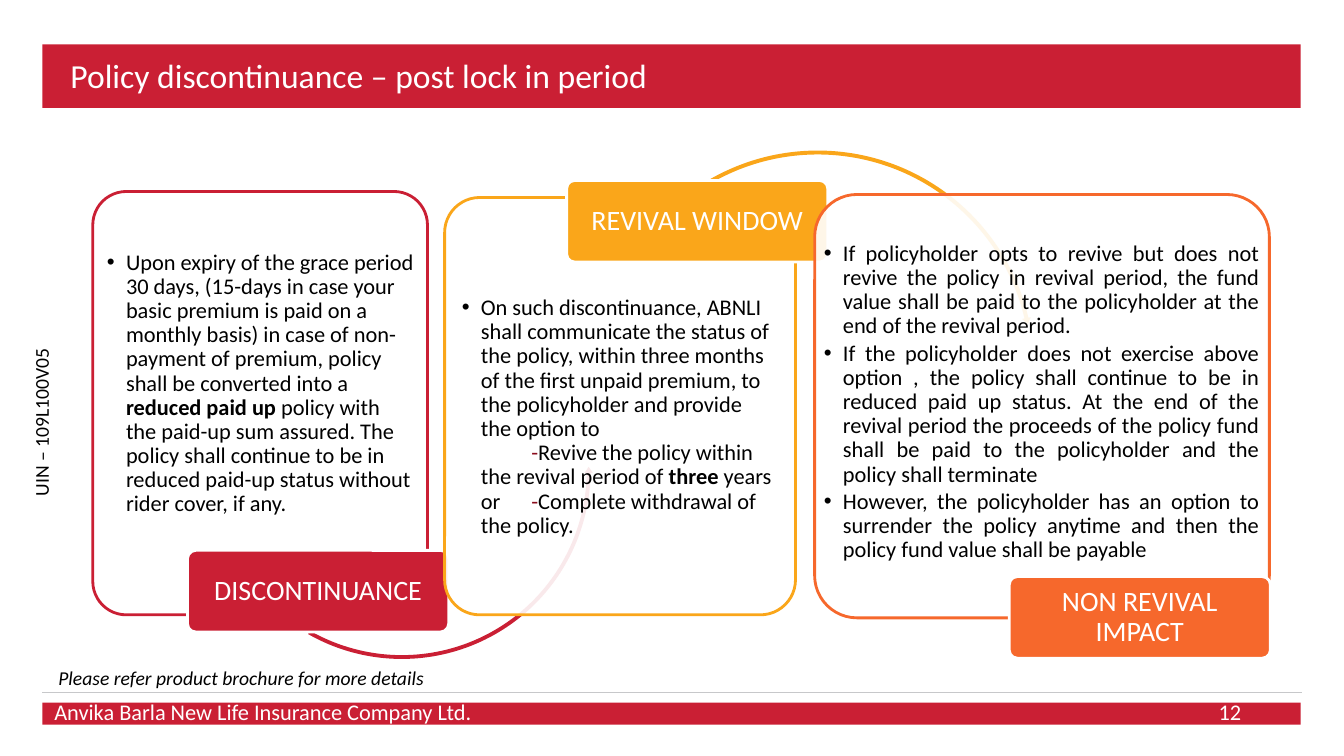
"""Build the slide on policy discontinuance after the lock-in period."""
from dataclasses import dataclass
from typing import Optional

from lxml import etree
from pptx import Presentation
from pptx.dml.color import RGBColor
from pptx.enum.shapes import MSO_CONNECTOR, MSO_SHAPE
from pptx.enum.text import MSO_ANCHOR, PP_ALIGN
from pptx.oxml.ns import qn
from pptx.util import Inches, Pt

COLORS = {"red": "CA1F34", "amber": "FAA61A", "orange": "F6682C", "dash": "8A0B1C",
          "rule": "C7C8CA", "black": "000000", "white": "FFFFFF"}
FONT = "Calibri"
BADGE_SIZE = (2.59, 0.81)
HANG = 0.19


@dataclass(frozen=True)
class Run:
    text: str
    bold: bool = False
    color: str = "black"


@dataclass(frozen=True)
class Para:
    runs: tuple[Run, ...]
    bullet: bool = True
    indent: float = -HANG
    after: float = 2.4
    tab: Optional[float] = None


@dataclass(frozen=True)
class Arc:
    kind: MSO_SHAPE
    box: tuple[float, ...]
    adj: tuple[float, ...]
    rotation: float = 0


@dataclass(frozen=True)
class Stage:
    title: str
    color: str
    card: tuple[float, ...]
    body: tuple[float, ...]
    inset: float
    badge: tuple[float, float]
    paras: tuple[Para, ...]
    align: PP_ALIGN = PP_ALIGN.LEFT
    arc: Optional[Arc] = None


STAGES = (
    Stage("DISCONTINUANCE", "red", (0.92, 1.9, 3.32, 4.2), (1.02, 2.49, 3.13, 2.6), 0.04,
          (1.86, 5.46),
          (Para((Run("Upon expiry of the grace period 30 days, (15-days in case your basic "
                     "premium is paid on a monthly basis) in case of non-payment of premium, "
                     "policy shall be converted into a "),
                 Run("reduced paid up ", bold=True),
                 Run("policy with the paid-up sum assured. The policy shall continue to be in "
                     "reduced paid-up status without rider cover, if any."))),),
          arc=Arc(MSO_SHAPE.LEFT_CIRCULAR_ARROW, (2.09, 2.77, 3.79, 3.79),
                  (0.01, 1.14, 0.513, 71.863, 0.011))),
    Stage("REVIVAL WINDOW", "amber", (4.41, 1.96, 3.48, 4.14), (4.5, 2.94, 3.29, 3.06), 0.08,
          (5.62, 1.79),
          (Para((Run("On such discontinuance, ABNLI shall communicate the status of the policy, "
                     "within three months of the first unpaid premium, to the policyholder and "
                     "provide the option to"),), after=0),
           Para((Run("-", color="dash"), Run("Revive the policy within the revival period of "),
                 Run("three", bold=True), Run(" years or\t"), Run("-", color="dash"),
                 Run("Complete withdrawal of the policy.")),
                bullet=False, indent=0.5, tab=0.58)),
          arc=Arc(MSO_SHAPE.CIRCULAR_ARROW, (5.94, 1.47, 4.34, 4.34),
                  (0.009, 0.994, 213.018, 141.523, 0.01), 351.8)),
    Stage("NON REVIVAL IMPACT", "orange", (8.08, 1.93, 4.51, 4.2), (8.17, 2.4, 4.32, 3.2), 0,
          (10.01, 5.72),
          (Para((Run("If policyholder opts to revive but does not revive the policy in revival "
                     "period, the fund value shall be paid to the policyholder at the end of the "
                     "revival period."),)),
           Para((Run("If the policyholder does not exercise above option , the policy shall "
                     "continue to be in reduced paid up status. At the end of the revival period "
                     "the proceeds of the policy fund shall be paid to the policyholder and the "
                     "policy shall terminate"),)),
           Para((Run("However, the policyholder has an option to surrender the policy anytime "
                     "and then the policy fund value shall be payable"),))),
          align=PP_ALIGN.JUSTIFY),
)


def rgb(color: str) -> RGBColor:
    return RGBColor.from_string(COLORS[color])


def add_run(p, run: Run, size: float, italic: bool = False) -> None:
    r = p.add_run()
    r.text = run.text
    r.font.name, r.font.size = FONT, Pt(size)
    r.font.bold, r.font.italic = run.bold, italic
    r.font.color.rgb = rgb(run.color)


def set_frame(tf, insets: tuple[float, ...], anchor: MSO_ANCHOR, wrap: bool = True) -> None:
    tf.word_wrap, tf.vertical_anchor = wrap, anchor
    tf.margin_left, tf.margin_top, tf.margin_right, tf.margin_bottom = map(Inches, insets)


def add_shape(s, kind: MSO_SHAPE, box: tuple[float, ...], fill: str,
              line: Optional[str] = None, adj: tuple[float, ...] = ()):
    sp = s.shapes.add_shape(kind, *map(Inches, box))
    sp.shadow.inherit = False
    sp.fill.solid()
    sp.fill.fore_color.rgb = rgb(fill)
    if line:
        sp.line.color.rgb, sp.line.width = rgb(line), Pt(2)
    else:
        sp.line.fill.background()
    for i, value in enumerate(adj):
        sp.adjustments[i] = value
    return sp


def add_text(s, box: tuple[float, ...], run: Run, size: float,
             align: PP_ALIGN = PP_ALIGN.LEFT, anchor: MSO_ANCHOR = MSO_ANCHOR.TOP,
             spacing: float = 1.0, italic: bool = False, wrap: bool = True,
             insets: tuple[float, ...] = (0.1, 0.05, 0.1, 0.05)):
    sp = s.shapes.add_textbox(*map(Inches, box))
    set_frame(sp.text_frame, insets, anchor, wrap)
    p = sp.text_frame.paragraphs[0]
    p.alignment, p.line_spacing = align, spacing
    add_run(p, run, size, italic)
    return sp


def add_body(s, stage: Stage) -> None:
    tf = s.shapes.add_textbox(*map(Inches, stage.body)).text_frame
    set_frame(tf, (stage.inset, 0, stage.inset, 0.14), MSO_ANCHOR.TOP)
    for i, para in enumerate(stage.paras):
        p = tf.add_paragraph() if i else tf.paragraphs[0]
        p.alignment, p.line_spacing, p.space_after = stage.align, 0.9, Pt(para.after)
        pPr = p._p.get_or_add_pPr()
        pPr.set("marL", str(Inches(HANG)))
        pPr.set("indent", str(Inches(para.indent)))
        if para.bullet:
            etree.SubElement(pPr, qn("a:buFont"), typeface="Arial")
            etree.SubElement(pPr, qn("a:buChar"), char="•")
        else:
            etree.SubElement(pPr, qn("a:buNone"))
        if para.tab:
            tabs = etree.SubElement(pPr, qn("a:tabLst"))
            etree.SubElement(tabs, qn("a:tab"), pos=str(Inches(para.tab)), algn="l")
        for run in para.runs:
            add_run(p, run, 16)


def add_stage(s, stage: Stage) -> None:
    card = add_shape(s, MSO_SHAPE.ROUNDED_RECTANGLE, stage.card, "white", stage.color, (0.1,))
    fill = card._element.spPr.find(qn("a:solidFill"))
    etree.SubElement(fill[0], qn("a:alpha"), val="90000")
    add_body(s, stage)
    if stage.arc:
        arc = add_shape(s, stage.arc.kind, stage.arc.box, stage.color, adj=stage.arc.adj)
        arc.rotation = stage.arc.rotation
    badge = add_shape(s, MSO_SHAPE.ROUNDED_RECTANGLE, stage.badge + BADGE_SIZE,
                      stage.color, "white", (0.1,))
    set_frame(badge.text_frame, (0.06, 0.05, 0.06, 0.05), MSO_ANCHOR.MIDDLE)
    p = badge.text_frame.paragraphs[0]
    p.alignment, p.line_spacing = PP_ALIGN.CENTER, 0.9
    add_run(p, Run(stage.title, color="white"), 20)


def add_frame(s) -> None:
    for top, height in ((0.44, 0.63), (6.97, 0.22)):
        add_shape(s, MSO_SHAPE.RECTANGLE, (0.42, top, 12.48, height), "red")
    rule = s.shapes.add_connector(MSO_CONNECTOR.STRAIGHT, Inches(0.42), Inches(6.87),
                                  Inches(12.91), Inches(6.87))
    rule.line.color.rgb, rule.line.width = rgb("rule"), Pt(1)
    etree.SubElement(rule._element.spPr, qn("a:effectLst"))
    uin = add_text(s, (-2.22, 3.99, 5.29, 0.3), Run("UIN – 109L100V05"), 14, PP_ALIGN.CENTER,
                   MSO_ANCHOR.BOTTOM, 0.9, insets=(0, 0.05, 0.1, 0.05))
    uin.rotation = 270
    add_text(s, (0.44, 6.88, 5.2, 0.4),
             Run("Anvika Barla New Life Insurance Company Ltd.", color="white"), 16)
    add_text(s, (9.41, 6.86, 3, 0.4), Run("12", color="white"), 16, PP_ALIGN.RIGHT,
             MSO_ANCHOR.MIDDLE)
    add_text(s, (0.6, 0.5, 12, 0.58),
             Run("Policy discontinuance – post lock in period", color="white"), 24)


def main() -> None:
    prs = Presentation()
    prs.slide_width, prs.slide_height = Inches(13.33), Inches(7.5)
    s = prs.slides.add_slide(prs.slide_layouts[6])
    add_frame(s)
    for stage in STAGES:
        add_stage(s, stage)
    add_text(s, (0.48, 6.44, 3.9, 0.42), Run("Please refer product brochure for more details"),
             14, spacing=1.5, italic=True, wrap=False)
    prs.save("out.pptx")


if __name__ == "__main__":
    main()
